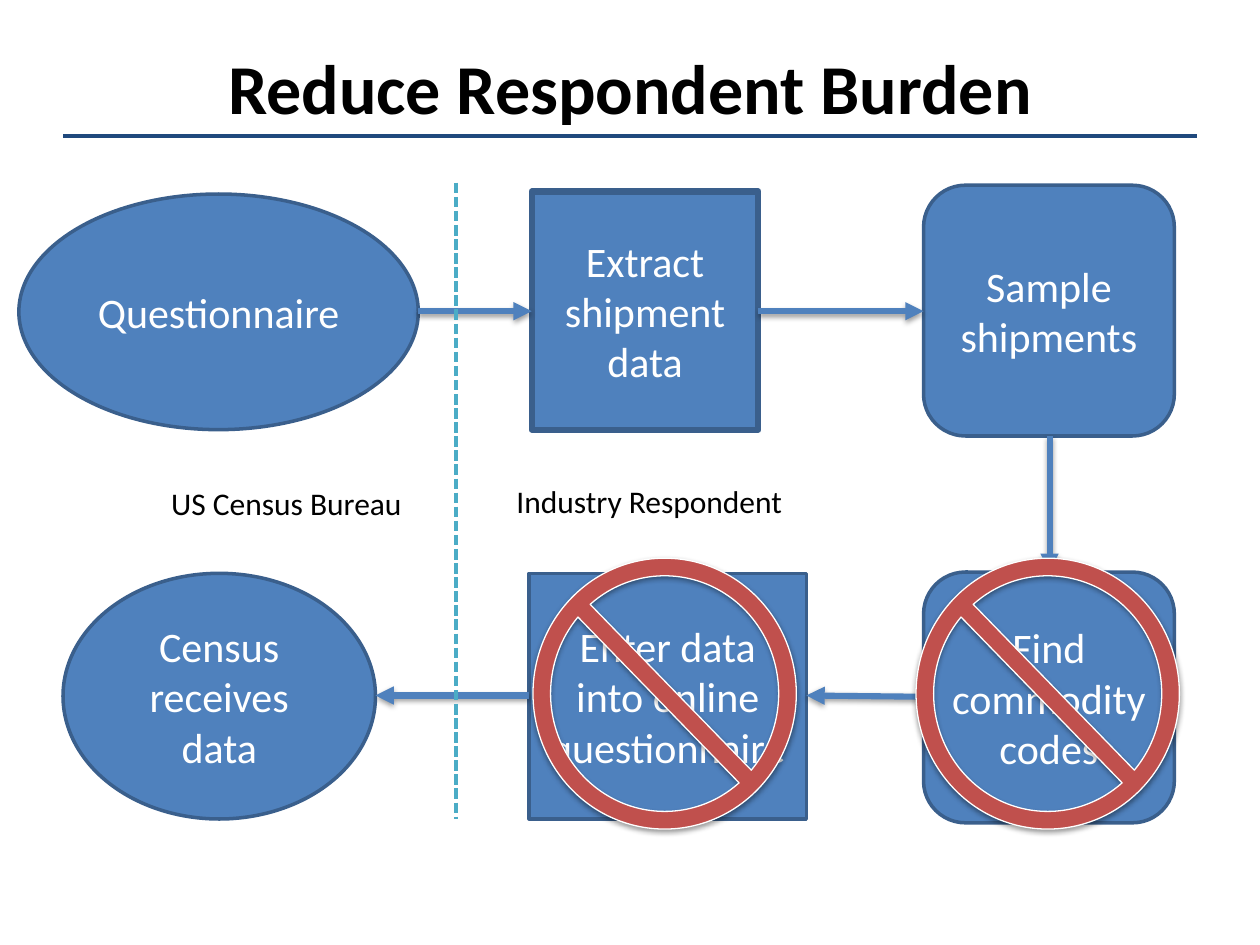
import pptx
import pptx.util
import pptx.dml.color
import pptx.enum.dml
import pptx.enum.shapes
import pptx.enum.text
import pptx.oxml
import pptx.oxml.ns
from pptx.util import Inches

RGBColor = pptx.dml.color.RGBColor
SHAPE = pptx.enum.shapes.MSO_SHAPE
ALIGN = pptx.enum.text.PP_ALIGN
ANCHOR = pptx.enum.text.MSO_ANCHOR
BLACK = RGBColor(0x00, 0x00, 0x00)
WHITE = RGBColor(0xFF, 0xFF, 0xFF)
BLUE = RGBColor(0x4F, 0x81, 0xBD)
OUTLINE = RGBColor(0x3A, 0x5F, 0x8C)
NAVY = RGBColor(0x1F, 0x49, 0x7D)
TEAL = RGBColor(0x4B, 0xAC, 0xC6)
RED = RGBColor(0xC0, 0x50, 0x4D)

SHADOW = (
    '<a:outerShdw blurRad="39370" dist="20320" dir="5400000" rotWithShape="0">'
    '<a:srgbClr val="000000"><a:alpha val="38000"/></a:srgbClr></a:outerShdw>'
)


def set_effects(shape, effects=""):
    namespace = pptx.oxml.ns.nsdecls("a")
    properties = shape.element.spPr
    properties.append(pptx.oxml.parse_xml(f"<a:effectLst {namespace}>{effects}</a:effectLst>"))


def add_line(start_x, start_y, end_x, end_y, color, width):
    line = slide.shapes.add_connector(
        pptx.enum.shapes.MSO_CONNECTOR.STRAIGHT,
        Inches(start_x), Inches(start_y), Inches(end_x), Inches(end_y),
    )
    line.line.color.rgb = color
    line.line.width = pptx.util.Pt(width)
    return line


deck = pptx.Presentation()
deck.slide_width = Inches(10)
deck.slide_height = Inches(7.5)
slide = deck.slides.add_slide(deck.slide_layouts[5])

title = slide.shapes.title
title.left, title.top = Inches(0.5), Inches(0.3)
title.width, title.height = Inches(9), Inches(0.78)
title.text_frame.text = "Reduce Respondent Burden"
title.text_frame.vertical_anchor = ANCHOR.TOP
para = title.text_frame.paragraphs[0]
para.alignment = ALIGN.CENTER
para.font.name = "Calibri"
para.font.size = pptx.util.Pt(40)
para.font.bold = True
para.font.color.rgb = BLACK

title_rule = add_line(0.5, 1.08, 9.5, 1.08, NAVY, 2)
set_effects(title_rule)

steps = [
    ("Questionnaire", SHAPE.OVAL, 0.15, 1.54, 3.17, 1.87, 2),
    ("Extract shipment data", SHAPE.RECTANGLE, 4.22, 1.52, 1.8, 1.89, 3.5),
    ("Sample shipments", SHAPE.ROUNDED_RECTANGLE, 7.33, 1.47, 1.99, 1.99, 2),
    ("Find commodity codes", SHAPE.ROUNDED_RECTANGLE, 7.33, 4.54, 1.99, 1.99, 2),
    ("Enter data into online questionnaire", SHAPE.RECTANGLE, 4.2, 4.55, 2.2, 1.95, 2),
    ("Census receives data", SHAPE.OVAL, 0.5, 4.55, 2.48, 1.95, 2),
]
for text, kind, left, top, width, height, line_width in steps:
    step = slide.shapes.add_shape(kind, Inches(left), Inches(top), Inches(width), Inches(height))
    step.shadow.inherit = False
    step.fill.solid()
    step.fill.fore_color.rgb = BLUE
    step.line.color.rgb = OUTLINE
    step.line.width = pptx.util.Pt(line_width)
    step.text_frame.word_wrap = True
    step.text_frame.vertical_anchor = ANCHOR.MIDDLE
    step.text_frame.text = text
    para = step.text_frame.paragraphs[0]
    para.alignment = ALIGN.CENTER
    para.font.name = "Calibri"
    para.font.size = pptx.util.Pt(24)
    para.font.color.rgb = WHITE

arrows = [
    (3.32, 2.47, 4.22, 2.47),
    (6.02, 2.47, 7.33, 2.47),
    (8.33, 3.46, 8.33, 4.54),
    (7.33, 5.53, 6.4, 5.52),
    (4.2, 5.52, 2.98, 5.52),
]
for ends in arrows:
    arrow = add_line(*ends, BLUE, 3.5)
    namespace = pptx.oxml.ns.nsdecls("a")
    arrow.line._get_or_add_ln().append(
        pptx.oxml.parse_xml(f'<a:tailEnd {namespace} type="triangle"/>')
    )
    set_effects(arrow, SHADOW)

divider = add_line(3.62, 1.45, 3.62, 6.5, TEAL, 2)
divider.line.dash_style = pptx.enum.dml.MSO_LINE.SQUARE_DOT
set_effects(divider)

for left in (4.23, 7.27):
    sign = slide.shapes.add_shape(
        SHAPE.NO_SYMBOL, Inches(left), Inches(4.43), Inches(2.09), Inches(2.15)
    )
    sign.adjustments[0] = 0.067
    sign.fill.solid()
    sign.fill.fore_color.rgb = RED
    sign.line.color.rgb = WHITE
    sign.line.width = pptx.util.Pt(0.75)
    set_effects(sign, SHADOW)

labels = [
    ("US Census Bureau", 1.26, 3.79, 2.12),
    ("Industry Respondent", 4, 3.78, 2.58),
]
for text, left, top, width in labels:
    label = slide.shapes.add_textbox(Inches(left), Inches(top), Inches(width), Inches(0.4))
    label.text_frame.word_wrap = True
    label.text_frame.auto_size = pptx.enum.text.MSO_AUTO_SIZE.SHAPE_TO_FIT_TEXT
    label.text_frame.text = text
    para = label.text_frame.paragraphs[0]
    para.font.name = "Calibri"
    para.font.size = pptx.util.Pt(18)
    para.font.color.rgb = BLACK

deck.save("out.pptx")
